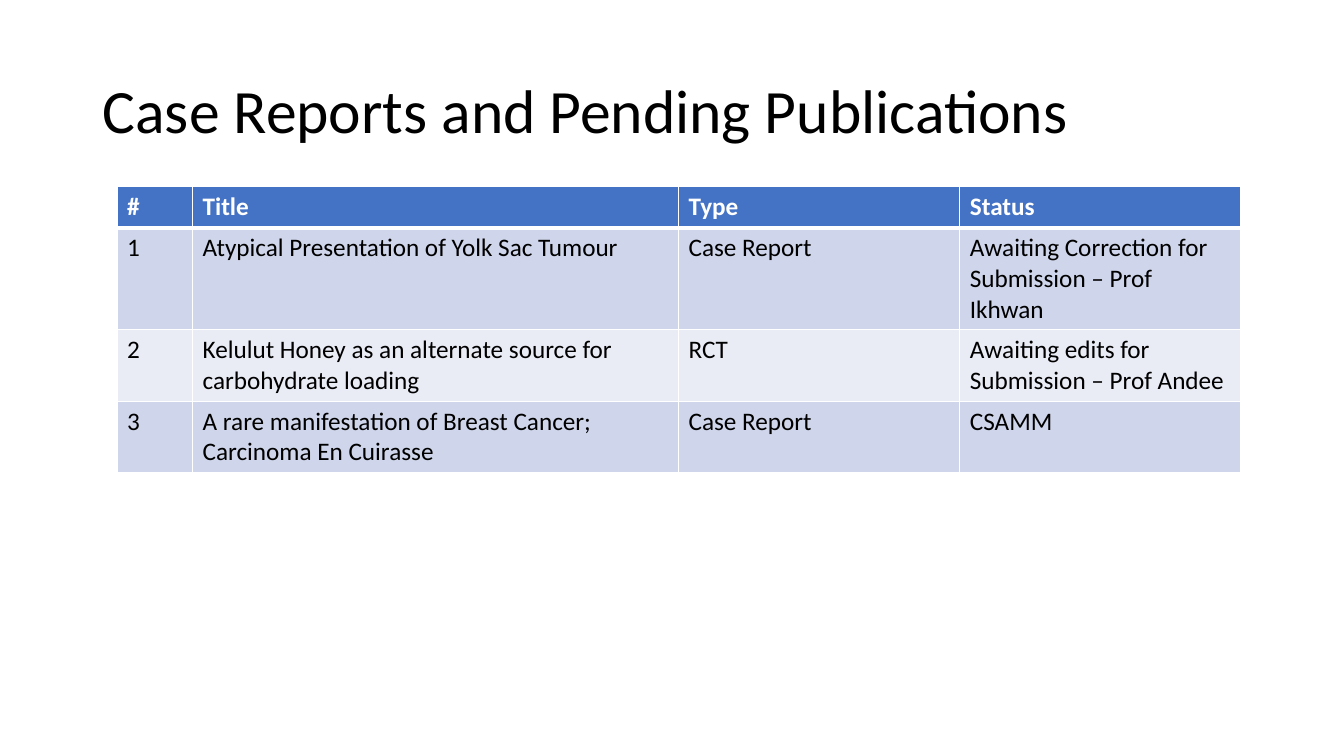
from pptx import Presentation
from pptx.dml.color import RGBColor
from pptx.enum.text import MSO_ANCHOR
from pptx.oxml.ns import qn
from pptx.util import Inches, Pt
from lxml import etree

MIDDLE = MSO_ANCHOR.MIDDLE
BLACK = RGBColor(0x00, 0x00, 0x00)
WHITE = RGBColor(0xFF, 0xFF, 0xFF)
HEADER_BLUE = RGBColor(0x44, 0x72, 0xC4)
BAND_DARK = RGBColor(0xCF, 0xD5, 0xEA)
BAND_LIGHT = RGBColor(0xE9, 0xEB, 0xF5)

COL_WIDTHS = [0.75, 4.82, 2.79, 2.79]
ROW_HEIGHTS = [0.41, 1.01, 0.71, 0.71]
PUBLICATIONS = [
    ["#", "Title", "Type", "Status"],
    ["1", "Atypical Presentation of Yolk Sac Tumour", "Case Report",
     "Awaiting Correction for Submission – Prof Ikhwan"],
    ["2", "Kelulut Honey as an alternate source for carbohydrate loading", "RCT",
     "Awaiting edits for Submission – Prof Andee"],
    ["3", "A rare manifestation of Breast Cancer; Carcinoma En Cuirasse",
     "Case Report", "CSAMM"],
]


def write_text(tf, text, size=18, color=BLACK, bold=False, spacing=None):
    """Write one formatted paragraph into a text frame."""
    p = tf.paragraphs[0]
    p.line_spacing = spacing
    r = p.add_run()
    r.text = text
    r.font.name = "Calibri"
    r.font.size = Pt(size)
    r.font.bold = bold
    r.font.color.rgb = color


def set_borders(cell, bottom=1, top=1):
    """Draw white borders round a cell, with widths in points."""
    tc_pr = cell._tc.get_or_add_tcPr()
    widths = {"a:lnL": 1, "a:lnR": 1, "a:lnT": top, "a:lnB": bottom}
    for i, (tag, width) in enumerate(widths.items()):
        ln = etree.Element(qn(tag), w=str(Pt(width)))
        fill = etree.SubElement(ln, qn("a:solidFill"))
        etree.SubElement(fill, qn("a:srgbClr"), val=str(WHITE))
        tc_pr.insert(i, ln)


def add_title(s, text, left, top, width, height):
    """Place the slide title in its box."""
    tf = s.shapes.add_textbox(
        Inches(left), Inches(top), Inches(width), Inches(height)).text_frame
    tf.word_wrap = True
    tf.vertical_anchor = MIDDLE
    write_text(tf, text, size=44, spacing=0.9)


def add_publications(s, rows, left, top):
    """Place the banded table of publications with its corner at left, top."""
    table = s.shapes.add_table(
        len(rows), len(COL_WIDTHS), Inches(left), Inches(top),
        Inches(sum(COL_WIDTHS)), Inches(sum(ROW_HEIGHTS))).table
    for column, width in zip(table.columns, COL_WIDTHS):
        column.width = Inches(width)
    for i, (row, height, texts) in enumerate(zip(table.rows, ROW_HEIGHTS, rows)):
        row.height = Inches(height)
        header = i == 0
        band = BAND_DARK if i % 2 else BAND_LIGHT
        for cell, text in zip(row.cells, texts):
            cell.fill.solid()
            cell.fill.fore_color.rgb = HEADER_BLUE if header else band
            set_borders(cell, bottom=3 if header else 1, top=3 if i == 1 else 1)
            write_text(cell.text_frame, text, bold=header,
                       color=WHITE if header else BLACK)


def main():
    """Build the slide and save it."""
    prs = Presentation()
    prs.slide_width = Inches(13.33)
    prs.slide_height = Inches(7.5)
    s = prs.slides.add_slide(prs.slide_layouts[6])
    add_title(s, "Case Reports and Pending Publications", 0.92, 0.4, 11.5, 1.45)
    add_publications(s, PUBLICATIONS, 1.16, 1.85)
    prs.save("out.pptx")


if __name__ == "__main__":
    main()
